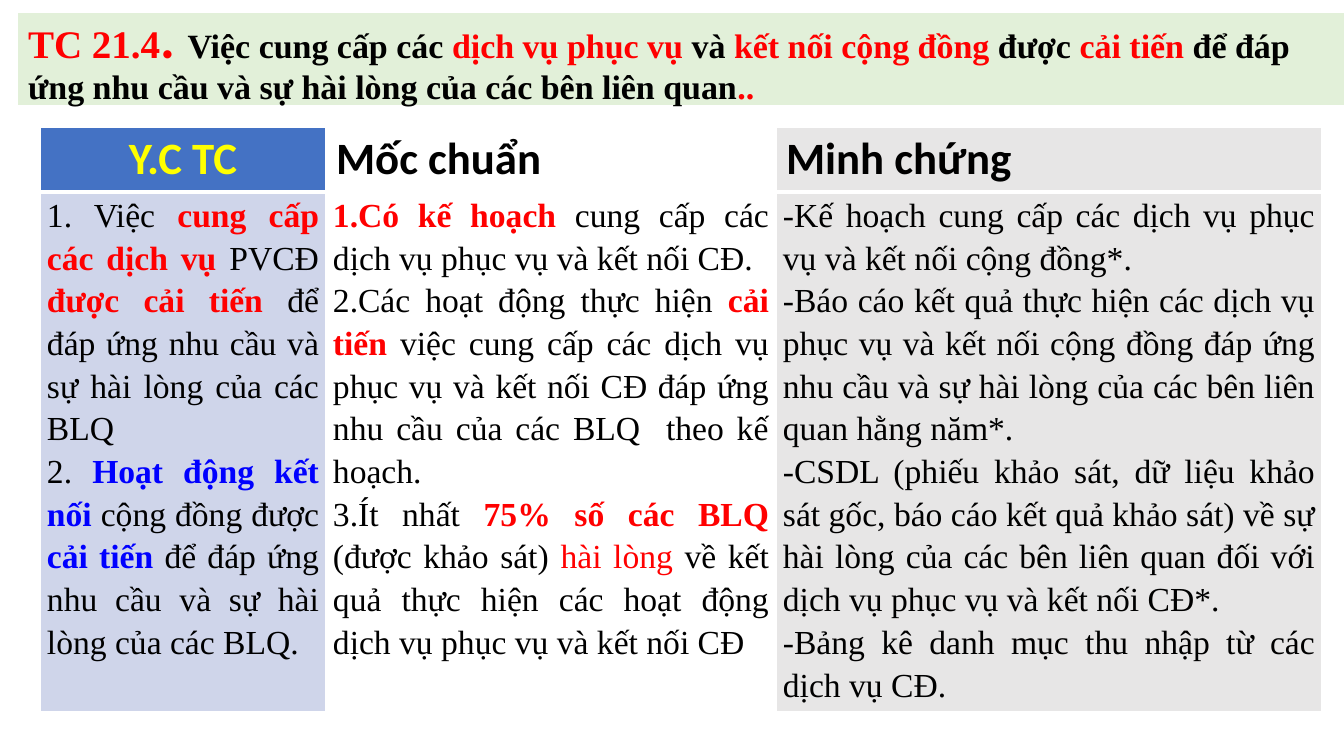
from dataclasses import dataclass

from lxml import etree
from pptx import Presentation
from pptx.dml.color import RGBColor
from pptx.enum.text import MSO_ANCHOR, MSO_AUTO_SIZE, PP_ALIGN
from pptx.oxml.ns import qn
from pptx.util import Emu, Pt

LEFT, CENTER, JUSTIFY = PP_ALIGN.LEFT, PP_ALIGN.CENTER, PP_ALIGN.JUSTIFY
MIDDLE, NO_FIT = MSO_ANCHOR.MIDDLE, MSO_AUTO_SIZE.NONE
SLIDE_W, SLIDE_H = 1344, 756
EMU_PER_PX = 12192000 / SLIDE_W
SERIF, SANS = "Times New Roman", "Calibri"
BLACK, RED, BLUE, YELLOW, WHITE = "000000", "FF0000", "0000FF", "FFFF00", "FFFFFF"
HEADER_H, BODY_H = 63, 520
TABLE_X, TABLE_Y = 40, 127
CELL_INSET = 7


@dataclass(frozen=True)
class Span:
    text: str
    color: str = BLACK
    bold: bool = False


@dataclass(frozen=True)
class Column:
    heading: str
    width: int
    heading_fill: str
    body_fill: str
    paragraphs: list[list[Span]]
    heading_color: str = BLACK
    heading_align: int = LEFT
    bullet: str = ""


TITLE = [
    Span("Việc cung cấp các "),
    Span("dịch vụ phục vụ ", RED),
    Span("và "),
    Span("kết nối cộng đồng ", RED),
    Span("được "),
    Span("cải tiến ", RED),
    Span("để đáp ứng nhu cầu và sự hài lòng của các bên liên quan"),
    Span("..", RED),
]

COLUMNS = [
    Column("Y.C TC", 286, "4472C4", "CFD5EA", [
        [Span("1. Việc "),
         Span("cung cấp các dịch vụ ", RED, True),
         Span("PVCĐ "),
         Span("được cải tiến ", RED, True),
         Span("để đáp ứng nhu cầu và sự hài lòng của các BLQ")],
        [Span("2. "),
         Span("Hoạt động kết nối ", BLUE, True),
         Span("cộng đồng được "),
         Span("cải tiến ", BLUE, True),
         Span("để đáp ứng nhu cầu và sự hài lòng của các BLQ.")],
    ], YELLOW, CENTER),
    Column("Mốc chuẩn", 450, WHITE, WHITE, [
        [Span("Có kế hoạch ", RED, True),
         Span("cung cấp các dịch vụ phục vụ và kết nối CĐ. ")],
        [Span("Các hoạt động thực hiện "),
         Span("cải tiến ", RED, True),
         Span("việc cung cấp các dịch vụ phục vụ và kết nối CĐ đáp ứng "
              "nhu cầu của các BLQ  theo kế hoạch.")],
        [Span("Ít nhất "),
         Span("75% số các BLQ ", RED, True),
         Span("(được khảo sát) "),
         Span("hài lòng ", RED),
         Span("về kết quả thực hiện các hoạt động dịch vụ phục vụ và kết nối CĐ")],
    ], bullet="1."),
    Column("Minh chứng", 546, "E7E6E6", "E7E6E6", [
        [Span("Kế hoạch cung cấp các dịch vụ phục vụ và kết nối cộng đồng*.")],
        [Span("Báo cáo kết quả thực hiện các dịch vụ phục vụ và kết nối cộng đồng "
              "đáp ứng nhu cầu và sự hài lòng của các bên liên quan hằng năm*.")],
        [Span("CSDL (phiếu khảo sát, dữ liệu khảo sát gốc, báo cáo kết quả khảo sát) "
              "về sự hài lòng của các bên liên quan đối với dịch vụ phục vụ và kết nối CĐ*.")],
        [Span("Bảng kê danh mục thu nhập từ các dịch vụ CĐ.")],
    ], bullet="-"),
]


def px(n: int) -> Emu:
    return Emu(round(n * EMU_PER_PX))


def rgb(color: str) -> RGBColor:
    return RGBColor.from_string(color)


def fill(obj, color: str) -> None:
    obj.fill.solid()
    obj.fill.fore_color.rgb = rgb(color)


def add_text(p, text: str, *, size: float, font: str = SERIF,
             color: str = BLACK, bold: bool = False) -> None:
    r = p.add_run()
    r.text = text
    r.font.name, r.font.size, r.font.bold = font, Pt(size), bold
    r.font.color.rgb = rgb(color)


def set_bullet(p, bullet: str) -> None:
    pPr = p._p.get_or_add_pPr()
    pPr.set("marL", "0")
    pPr.set("indent", "0")
    if bullet == "1.":
        etree.SubElement(pPr, qn("a:buAutoNum"), type="arabicPeriod")
    elif bullet:
        etree.SubElement(pPr, qn("a:buFont"), typeface=SERIF)
        etree.SubElement(pPr, qn("a:buChar"), char=bullet)


def set_borders(cell, top: int, bottom: int) -> None:
    tcPr = cell._tc.get_or_add_tcPr()
    for side, width in (("L", 1), ("R", 1), ("T", top), ("B", bottom)):
        ln = etree.SubElement(tcPr, qn(f"a:ln{side}"), w=str(Pt(width)))
        solid = etree.SubElement(ln, qn("a:solidFill"))
        etree.SubElement(solid, qn("a:srgbClr"), val=WHITE)


def draw_title(s) -> None:
    sp = s.shapes.title
    sp.left, sp.top, sp.width, sp.height = px(18), px(13), px(1326), px(92)
    fill(sp, "E2F0D9")
    tf = sp.text_frame
    tf.word_wrap, tf.auto_size, tf.vertical_anchor = True, NO_FIT, MIDDLE
    p = tf.paragraphs[0]
    p.alignment, p.line_spacing = LEFT, 0.9
    add_text(p, "TC 21.4", size=27.9, color=RED, bold=True)
    add_text(p, ". ", size=39.6, font=SANS, color=RED, bold=True)
    for span in TITLE:
        add_text(p, span.text, size=24.3, color=span.color, bold=True)


def draw_heading(cell, col: Column) -> None:
    set_borders(cell, 1, 3)
    fill(cell, col.heading_fill)
    p = cell.text_frame.paragraphs[0]
    p.alignment = col.heading_align
    add_text(p, col.heading, size=32, font=SANS, color=col.heading_color, bold=True)


def draw_body(cell, col: Column) -> None:
    set_borders(cell, 3, 1)
    fill(cell, col.body_fill)
    cell.margin_left = cell.margin_right = px(CELL_INSET)
    cell.margin_top = cell.margin_bottom = 0
    tf = cell.text_frame
    for i, spans in enumerate(col.paragraphs):
        p = tf.add_paragraph() if i else tf.paragraphs[0]
        p.alignment, p.line_spacing = JUSTIFY, 1.15
        set_bullet(p, col.bullet)
        for span in spans:
            add_text(p, span.text, size=24, color=span.color, bold=span.bold)


def draw_table(s) -> None:
    width = sum(col.width for col in COLUMNS)
    table = s.shapes.add_table(2, len(COLUMNS), px(TABLE_X), px(TABLE_Y),
                               px(width), px(HEADER_H + BODY_H)).table
    table.rows[0].height, table.rows[1].height = px(HEADER_H), px(BODY_H)
    for i, col in enumerate(COLUMNS):
        table.columns[i].width = px(col.width)
        draw_heading(table.cell(0, i), col)
        draw_body(table.cell(1, i), col)


def main() -> None:
    prs = Presentation()
    prs.slide_width, prs.slide_height = px(SLIDE_W), px(SLIDE_H)
    s = prs.slides.add_slide(prs.slide_layouts.get_by_name("Title Only"))
    draw_title(s)
    draw_table(s)
    prs.save("out.pptx")


if __name__ == "__main__":
    main()
